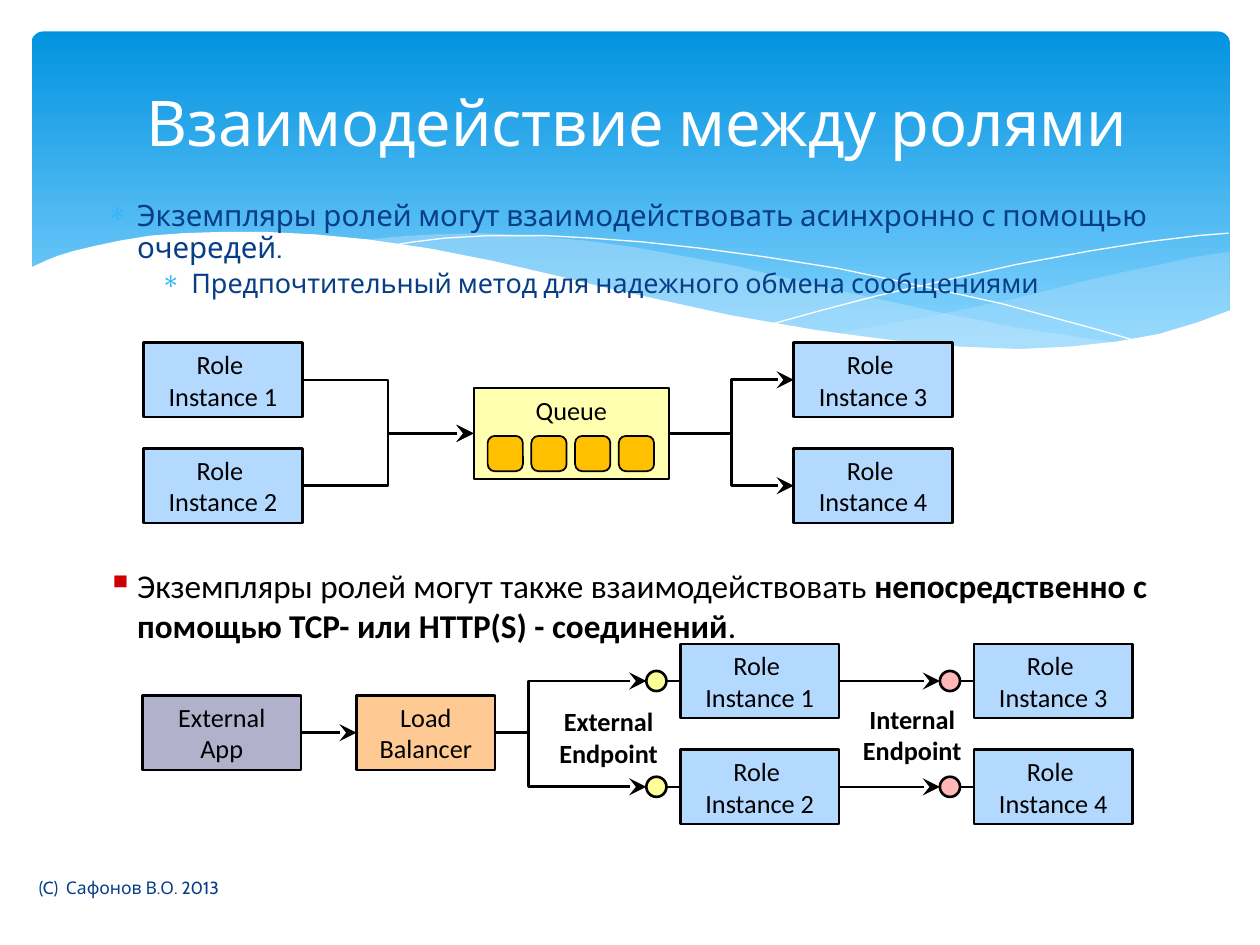
from typing import NamedTuple, Optional

from lxml.etree import SubElement
from pptx import Presentation
from pptx.dml.color import RGBColor
from pptx.enum.shapes import MSO_CONNECTOR as Connector, MSO_SHAPE as Preset
from pptx.enum.text import MSO_ANCHOR as Anchor, PP_ALIGN as Align
from pptx.oxml.ns import qn
from pptx.util import Inches, Pt

COLORS = {
    "sky": "0293E0", "sky_light": "83D3FE", "wave": "C6E7FC", "white": "FFFFFF",
    "black": "000000", "navy": "073E87", "bullet": "31B6FD", "red": "CC0000",
    "role": "B3D9FF", "queue": "FFFFAF", "message": "FFC000", "app": "B1B1CB",
    "balancer": "FFC993", "external": "FFFF99", "internal": "FFB7B7",
}
COLUMNS, ROWS = 100, 75  # grid of the slide, one cell is a tenth of an inch
BOX_W, BOX_H = 12.6, 5.9
ROLE_STEP = 8.4
PORT = 1.6  # diameter of an endpoint
LEFT, RIGHT = 1, 3


class Cell(NamedTuple):
    x: float
    y: float
    w: float = BOX_W
    h: float = BOX_H

    @property
    def middle(self) -> float:
        return self.y + self.h / 2

    @property
    def right(self) -> float:
        return self.x + self.w


class Wave(NamedTuple):
    """Outline in hundredths of an inch; without a fill it is an open white line."""
    points: list
    fill: Optional[str] = None
    opacity: int = 100


class Style(NamedTuple):
    size: float
    font: str = "Calibri"
    color: str = "black"
    bold: bool = False


class Bullet(NamedTuple):
    char: str
    color: str
    indent: float
    percent: int = 100


LABEL, LABEL_BOLD = Style(15), Style(15, bold=True)

WAVES = [
    Wave([(975, 200), (948, 204), (921, 210), (891, 216), (861, 223), (805, 237), (753, 248),
          (706, 257), (661, 265), (691, 269), (719, 272), (745, 275), (769, 277), (803, 278),
          (844, 277), (881, 273), (913, 267), (942, 259), (963, 252), (976, 247), (976, 200)],
         "wave", 29),
    Wave([(893, 273), (866, 269), (807, 260), (741, 247), (668, 231), (629, 222), (584, 211),
          (541, 203), (502, 196), (465, 191), (420, 187), (380, 185), (344, 186), (313, 188),
          (286, 191), (323, 196), (362, 203), (404, 211), (449, 222), (491, 232), (530, 240),
          (566, 248), (601, 255), (634, 261), (680, 268), (722, 274), (761, 277), (796, 278),
          (838, 278), (867, 276), (893, 273)], "wave", 40),
    Wave([(309, 195), (328, 192), (353, 189), (387, 187), (433, 187), (469, 189), (510, 192),
          (556, 197), (608, 204), (665, 213), (727, 226), (795, 241), (869, 261), (907, 272)]),
    Wave([(613, 257), (653, 246), (695, 235), (748, 223), (806, 210), (866, 199), (910, 192),
          (951, 187), (975, 185)]),
    Wave([(977, 246), (950, 256), (920, 265), (887, 271), (850, 275), (809, 277), (761, 275),
          (708, 270), (648, 262), (579, 250), (529, 239), (475, 227), (447, 220), (391, 207),
          (340, 197), (292, 190), (250, 186), (211, 184), (177, 184), (146, 185), (119, 187),
          (95, 191), (76, 195), (59, 199), (46, 203), (36, 207), (23, 213), (23, 329),
          (977, 329)], "white"),
]


def grid(units: float) -> int:
    return Inches(units / 10)


def rgb(name: str) -> RGBColor:
    return RGBColor.from_string(COLORS[name])


def draw_wave(shapes, wave: Wave) -> None:
    builder = shapes.build_freeform(*wave.points[0], scale=Inches(0.01))
    builder.add_line_segments(wave.points[1:], close=bool(wave.fill))
    outline = builder.convert_to_shape()
    outline.shadow.inherit = False
    if wave.fill:
        outline.fill.solid()
        outline.fill.fore_color.rgb = rgb(wave.fill)
        outline.line.fill.background()
        color = outline.element.spPr.find(f"{qn('a:solidFill')}/{qn('a:srgbClr')}")
        SubElement(color, qn("a:alpha"), val=str(wave.opacity * 1000))
    else:
        outline.fill.background()
        outline.line.color.rgb = rgb("white")
        outline.line.width = Pt(0)


def draw_backdrop(shapes) -> None:
    sky = shapes.add_shape(Preset.ROUNDED_RECTANGLE, *map(grid, Cell(2.5, 2.5, 95.1, 27)))
    sky.adjustments[0] = 0.034
    sky.shadow.inherit = False
    sky.line.fill.background()
    sky.fill.gradient()
    sky.fill.gradient_angle = 270
    for stop, name, position in zip(sky.fill.gradient_stops, ("sky", "sky_light"), (0, 0.9)):
        stop.color.rgb = rgb(name)
        stop.position = position
    for wave in WAVES:
        draw_wave(shapes, wave)


def add_run(paragraph, words: str, style: Style) -> None:
    run = paragraph.add_run()
    run.text = words
    run.font.size, run.font.name, run.font.bold = Pt(style.size), style.font, style.bold
    run.font.color.rgb = rgb(style.color)


def add_lines(paragraph, lines: tuple, style: Style) -> None:
    paragraph.alignment = Align.CENTER
    for number, line in enumerate(lines):
        if number:
            paragraph.add_line_break()
        add_run(paragraph, line, style)


def add_bullet(paragraph, bullet: Bullet, size: float, spacing: float) -> None:
    paragraph.line_spacing = spacing
    paragraph.space_before = Pt(size * 0.2)
    props = paragraph._p.get_or_add_pPr()
    props.set("marL", str(Inches(bullet.indent)))
    props.set("indent", str(Inches(-0.24)))
    SubElement(SubElement(props, qn("a:buClr")), qn("a:srgbClr"), val=COLORS[bullet.color])
    SubElement(props, qn("a:buSzPct"), val=str(bullet.percent * 1000))
    SubElement(props, qn("a:buChar"), char=bullet.char)


def add_text(shapes, cell: Cell, anchor=Anchor.TOP):
    frame = shapes.add_textbox(*map(grid, cell)).text_frame
    frame.word_wrap = True
    frame.vertical_anchor = anchor
    return frame


def add_node(shapes, cell: Cell, fill: str, lines: tuple = (), preset=Preset.RECTANGLE,
             width: float = 1.5, anchor=Anchor.MIDDLE):
    node = shapes.add_shape(preset, *map(grid, cell))
    node.shadow.inherit = False
    node.fill.solid()
    node.fill.fore_color.rgb = rgb(fill)
    node.line.color.rgb = rgb("black")
    node.line.width = Pt(width)
    frame = node.text_frame
    frame.word_wrap = False
    frame.vertical_anchor = anchor
    if lines:
        add_lines(frame.paragraphs[0], lines, LABEL)
    return node


def add_role(shapes, cell: Cell, number: int):
    return add_node(shapes, cell, "role", ("Role ", f"Instance {number}"))


def add_link(shapes, start: tuple, end: tuple, source=None, target=None, arrow: bool = True,
             bend: Optional[float] = None) -> None:
    """Straight, or an elbow turning at the given share of its width."""
    kind = Connector.STRAIGHT if bend is None else Connector.ELBOW
    link = shapes.add_connector(kind, *map(grid, start + end))
    link.line.color.rgb = rgb("black")
    link.line.width = Pt(1.5)
    props = link.element.spPr
    if bend is not None:
        guides = props.find(qn("a:prstGeom")).get_or_add_avLst()
        SubElement(guides, qn("a:gd"), name="adj1", fmla=f"val {round(bend * 100000)}")
    if arrow:
        SubElement(link.line._get_or_add_ln(), qn("a:tailEnd"), type="stealth", w="lg", len="lg")
    SubElement(props, qn("a:effectLst"))
    if source is not None:
        link.begin_connect(source, RIGHT)
    if target is not None:
        link.end_connect(target, LEFT)


def draw_queue_exchange(shapes) -> None:
    queue = Cell(37.6, 30.8, 15.5, 7.2)
    add_node(shapes, queue, "queue", ("Queue",), Preset.FLOWCHART_PROCESS, 1, Anchor.TOP)
    for i in range(4):
        message = add_node(shapes, Cell(38.7 + 3.47 * i, 34.6, 2.8, 2.8), "message",
                           preset=Preset.ROUNDED_RECTANGLE, width=1)
        message.adjustments[0] = 0.2
    for i in range(2):
        sender, receiver = (Cell(x, 27.2 + ROLE_STEP * i) for x in (11.4, 63))
        add_role(shapes, sender, i + 1)
        add_role(shapes, receiver, i + 3)
        add_link(shapes, (sender.right, sender.middle), (queue.x, queue.middle), bend=0.5)
        add_link(shapes, (queue.right, queue.middle), (receiver.x, receiver.middle), bend=0.5)


def draw_direct_exchange(shapes) -> None:
    app, balancer = Cell(11.3, 55.2), Cell(28.3, 55.2, 11)
    app_node = add_node(shapes, app, "app", ("External", "App"))
    balancer_node = add_node(shapes, balancer, "balancer", ("Load", "Balancer"))
    add_link(shapes, (app.right, app.middle), (balancer.x, balancer.middle),
             app_node, balancer_node)
    for i in range(2):
        previous = None
        for x, number, port_fill in ((54, i + 1, "external"), (77.3, i + 3, "internal")):
            role = Cell(x, 51.1 + ROLE_STEP * i)
            port = Cell(x - 2.7, role.middle - PORT / 2, PORT, PORT)
            node = add_role(shapes, role, number)
            add_link(shapes, (port.right, role.middle), (x, role.middle), target=node, arrow=False)
            add_node(shapes, port, port_fill, preset=Preset.OVAL)
            if previous is None:
                add_link(shapes, (balancer.right, balancer.middle), (port.x, role.middle),
                         bend=0.22)
            else:
                add_link(shapes, (54 + BOX_W, role.middle), (port.x, role.middle), previous)
            previous = node
    for x, y, side in ((43.4, 55.5, "External"), (67.5, 55.3, "Internal")):
        frame = add_text(shapes, Cell(x, y, 9.8, 6.1))
        add_lines(frame.paragraphs[0], (f"{side} Endpoint",), LABEL_BOLD)


def main() -> None:
    deck = Presentation()
    deck.slide_width, deck.slide_height = grid(COLUMNS), grid(ROWS)
    slide = deck.slides.add_slide(deck.slide_layouts[5])
    shapes, title = slide.shapes, slide.shapes.title
    draw_backdrop(shapes)

    title.element.getparent().append(title.element)  # in front of the backdrop
    title.left, title.top, title.width, title.height = map(grid, Cell(5, 3.7, 91.1, 11.9))
    title.text_frame.vertical_anchor = Anchor.MIDDLE
    add_lines(title.text_frame.paragraphs[0], ("Взаимодействие между ролями",),
              Style(36, "Cabin", "white"))

    queues = add_text(shapes, Cell(7.5, 15.5, 85, 11.2))
    points = [
        ("Экземпляры ролей могут взаимодействовать асинхронно с помощью очередей.", 16.8, 0.24),
        ("Предпочтительный метод для надежного обмена сообщениями", 15.4, 0.67),
    ]
    for i, (words, size, indent) in enumerate(points):
        paragraph = queues.add_paragraph() if i else queues.paragraphs[0]
        add_bullet(paragraph, Bullet("∗", "bullet", indent), size, 0.9)
        add_run(paragraph, words, Style(size, "Cabin", "navy"))
    draw_queue_exchange(shapes)

    direct = add_text(shapes, Cell(7.5, 44.4, 85.5, 6.4)).paragraphs[0]
    add_bullet(direct, Bullet("▪", "red", 0.24, 110), 19, 1.0)
    add_run(direct, "Экземпляры ролей могут также взаимодействовать ", Style(19))
    add_run(direct, "непосредственно с помощью TCP- или HTTP(S) - соединений",
            Style(19, bold=True))
    add_run(direct, ".", Style(19))
    draw_direct_exchange(shapes)

    credit = add_text(shapes, Cell(2.1, 68.4, 41.4, 4), Anchor.MIDDLE)
    add_run(credit.paragraphs[0], "(C)  Сафонов В.О. 2013", Style(10, "Cabin", "navy"))
    deck.save("out.pptx")


if __name__ == "__main__":
    main()
